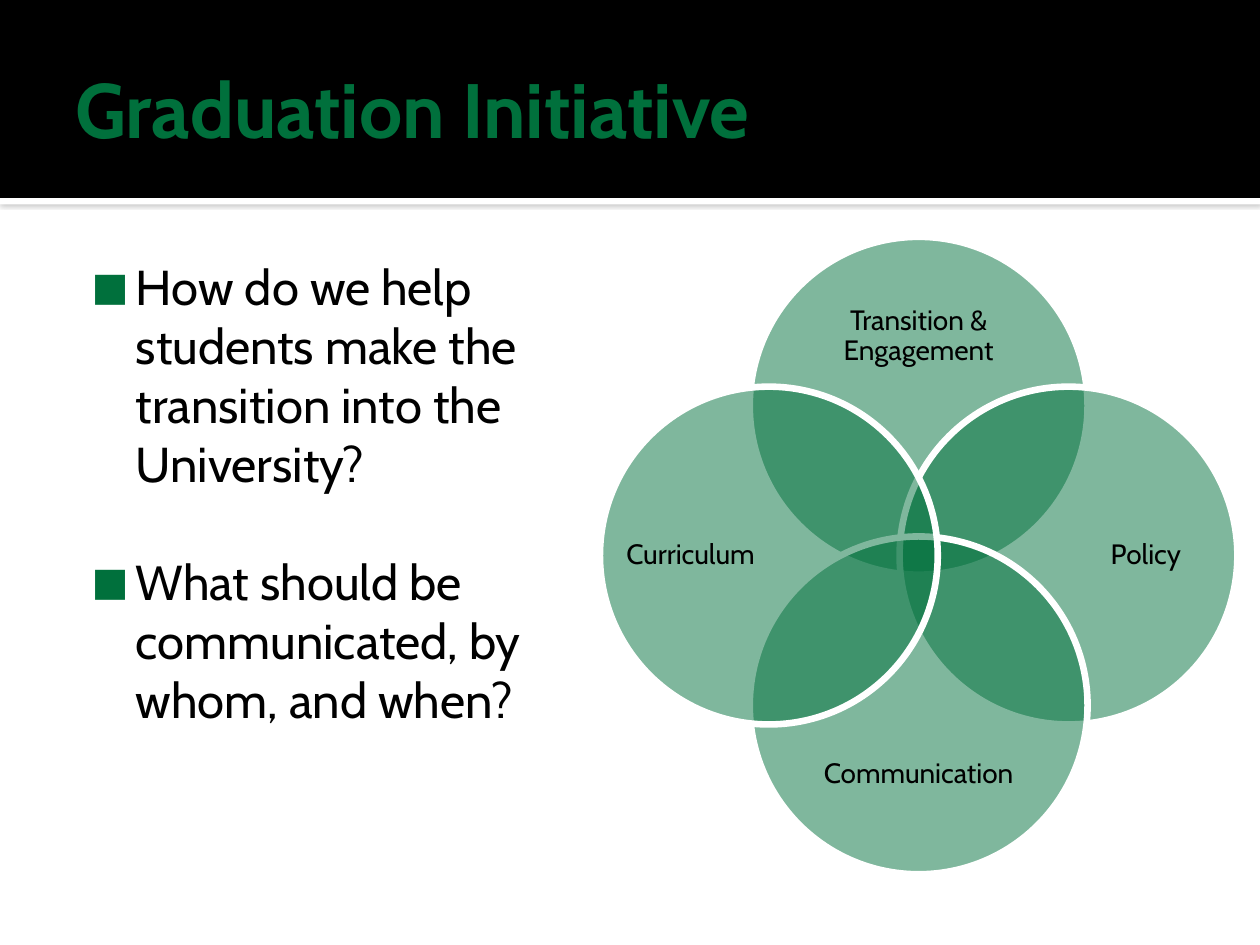
"""Build the Graduation Initiative slide with its four-circle Venn diagram."""
from dataclasses import dataclass

from lxml.etree import SubElement
from pptx import Presentation
from pptx.dml.color import RGBColor
from pptx.enum.shapes import MSO_SHAPE
from pptx.enum.text import MSO_ANCHOR, PP_ALIGN
from pptx.oxml.ns import qn
from pptx.shapes.autoshape import Shape
from pptx.slide import Slide
from pptx.util import Cm, Pt


@dataclass(frozen=True)
class Theme:
    font: str = "Cabin"
    green: str = "00703C"
    black: str = "000000"
    white: str = "FFFFFF"
    gray: str = "808080"
    title: int = 44
    body: int = 28
    label: int = 16


@dataclass(frozen=True)
class Box:
    left: float
    top: float
    width: float
    height: float


@dataclass(frozen=True)
class Petal:
    text: str
    dx: int
    dy: int
    align: PP_ALIGN = PP_ALIGN.CENTER


THEME = Theme()
MID_X, MID_Y = 18.52, 11.2
SIZE, SHIFT = 6.81, 3.02
LONG, SHORT = 5.26, 2.16
SIDE, WIDE, HIGH = 2.62, 4.58, 4.42
PETALS = [
    Petal("Transition & Engagement", 0, -1),
    Petal("Policy", 1, 0),
    Petal("Communication", 0, 1),
    Petal("Curriculum", -1, 0, PP_ALIGN.LEFT),
]
POINTS = [
    "How do we help students make the transition into the University?",
    "What should be communicated, by whom, and when?",
]


def place(box: Box) -> tuple[Cm, Cm, Cm, Cm]:
    return Cm(box.left), Cm(box.top), Cm(box.width), Cm(box.height)


def center(x: float, y: float, width: float, height: float) -> Box:
    return Box(x - width / 2, y - height / 2, width, height)


def add_form(slide: Slide, kind: MSO_SHAPE, box: Box, color: str) -> Shape:
    form = slide.shapes.add_shape(kind, *place(box))
    form.shadow.inherit = False
    form.fill.solid()
    form.fill.fore_color.rgb = RGBColor.from_string(color)
    form.line.fill.background()
    return form


def add_text(slide: Slide, box: Box, lines: list[str], size: int, color: str,
             pads: tuple[float, ...] = (0, 0, 0, 0), bold: bool = False,
             anchor: MSO_ANCHOR = MSO_ANCHOR.MIDDLE) -> list:
    frame = slide.shapes.add_textbox(*place(box)).text_frame
    frame.word_wrap = True
    frame.vertical_anchor = anchor
    frame.margin_left, frame.margin_top, frame.margin_right, frame.margin_bottom = map(Cm, pads)
    frame.text = "\n".join(lines)
    for line in frame.paragraphs:
        for run in line.runs:
            run.font.name = THEME.font
            run.font.size = Pt(size)
            run.font.bold = bold
            run.font.color.rgb = RGBColor.from_string(color)
    return list(frame.paragraphs)


def add_shade(form: Shape) -> None:
    effect = form.element.spPr.find(qn("a:effectLst"))
    shade = SubElement(effect, qn("a:outerShdw"), blurRad=str(Pt(2.5)),
                       dist=str(Pt(0.8)), dir="5400000", algn="t", rotWithShape="0")
    tint = SubElement(shade, qn("a:srgbClr"), val=THEME.gray)
    SubElement(tint, qn("a:alpha"), val="60000")


def add_bullet(line) -> None:
    props = line._p.get_or_add_pPr()
    props.set("marL", str(Cm(1.22)))
    props.set("indent", str(Cm(-0.89)))
    tint = SubElement(props, qn("a:buClr"))
    SubElement(tint, qn("a:srgbClr"), val=THEME.green)
    SubElement(props, qn("a:buSzPct"), val="80000")
    SubElement(props, qn("a:buFont"), typeface=THEME.font)
    SubElement(props, qn("a:buChar"), char="■")


def add_petal(slide: Slide, petal: Petal) -> None:
    box = center(MID_X + petal.dx * SHIFT, MID_Y + petal.dy * SHIFT, SIZE, SIZE)
    disk = add_form(slide, MSO_SHAPE.OVAL, box, THEME.green)
    for tint in disk.element.xpath("p:spPr/a:solidFill/a:srgbClr"):
        SubElement(tint, qn("a:alpha"), val="50000")
    disk.line.color.rgb = RGBColor.from_string(THEME.white)
    disk.line.width = Pt(3.78)
    width, height = (SIDE, LONG) if petal.dx else (LONG, SHORT)
    spot = center(MID_X + petal.dx * WIDE, MID_Y + petal.dy * HIGH, width, height)
    for line in add_text(slide, spot, [petal.text], THEME.label, THEME.black):
        line.alignment = petal.align
        line.line_spacing = 0.9


def main() -> None:
    deck = Presentation()
    deck.slide_width, deck.slide_height = Cm(25.4), Cm(19.05)
    slide = deck.slides.add_slide(deck.slide_layouts[6])
    strip = add_form(slide, MSO_SHAPE.RECTANGLE, Box(0, 3.99, 25.4, 0.13), THEME.white)
    add_shade(strip)
    add_form(slide, MSO_SHAPE.RECTANGLE, Box(0, 0, 25.4, 3.99), THEME.black)
    add_text(slide, Box(1.27, 0.43, 22.86, 3.48), ["Graduation Initiative"],
             THEME.title, THEME.green, (0.25, 0.13, 0.13, 0.13), bold=True)
    lines = add_text(slide, Box(1.27, 4.93, 11.23, 12.85), POINTS, THEME.body,
                     THEME.black, (0.25, 0.25, 0.25, 0.13), anchor=MSO_ANCHOR.TOP)
    lines[1].space_before = Pt(34)
    for line in lines:
        add_bullet(line)
    for petal in PETALS:
        add_petal(slide, petal)
    deck.save("out.pptx")


if __name__ == "__main__":
    main()
